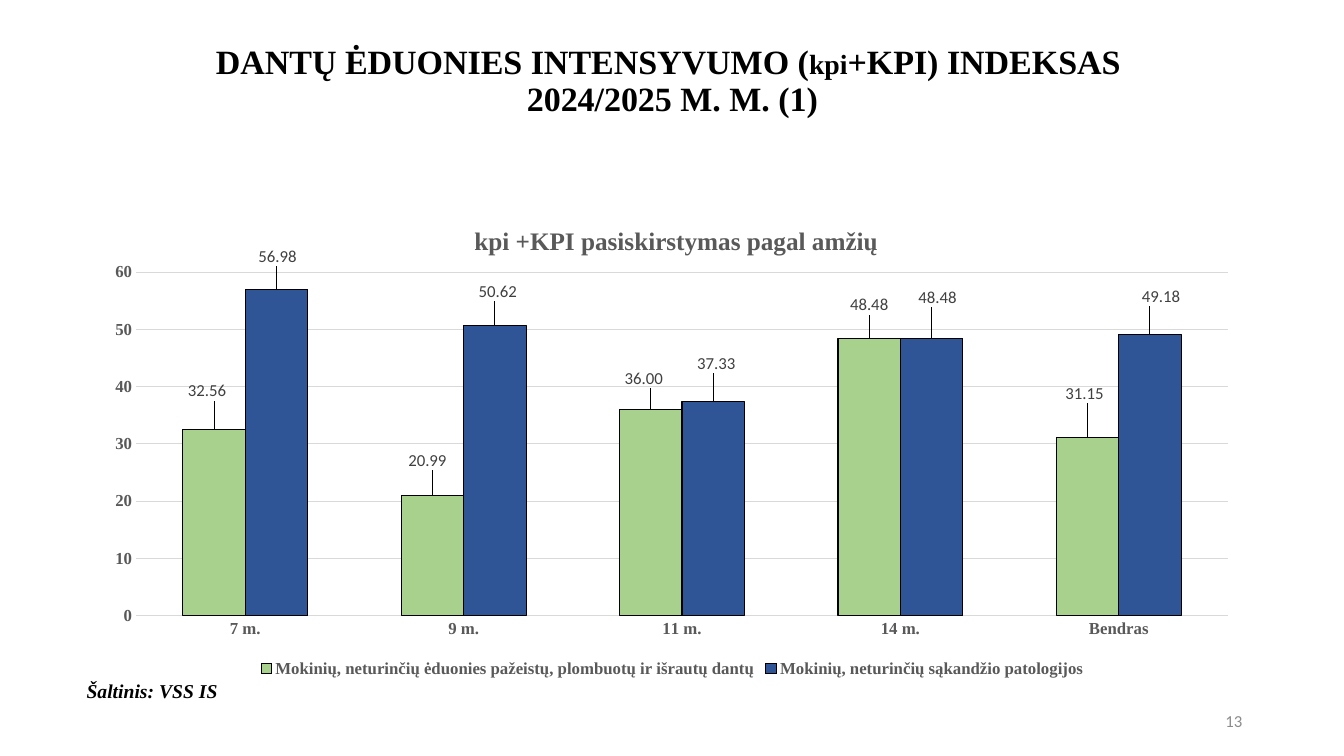
from pptx import Presentation
from pptx import util as u
from pptx.chart.data import CategoryChartData
from pptx.dml.color import RGBColor
from pptx.enum import chart as ch, text
from pptx.oxml import parse_xml
from pptx.oxml.ns import nsdecls, qn

INK = {"black": "000000", "axis": "595959", "label": "404040", "grid": "D9D9D9",
       "page": "8C8C8C", "green": "A9D18E", "blue": "2F5597"}
SERIF, SANS = "Times New Roman", "Calibri"
WIDE, HIGH = 11.5, 4.76  # chart size in inches

AGES = ["7 m.", "9 m.", "11 m.", "14 m.", "Bendras"]
# name, fill, values, label shifts in inches
SERIES = [
    ("Mokinių, neturinčių ėduonies pažeistų, plombuotų ir išrautų dantų", "green",
     [32.56, 20.99, 36, 48.48, 31.15],
     [(-0.07, -0.24), (-0.05, -0.21), (-0.07, -0.17), (0, -0.19), (-0.03, -0.3)]),
    ("Mokinių, neturinčių sąkandžio patologijos", "blue",
     [56.98, 50.62, 37.33, 48.48, 49.18],
     [(0.01, -0.19), (0.03, -0.2), (0.03, -0.24), (0.06, -0.26), (0.11, -0.23)]),
]


def style(font, size, color, face=SERIF, bold=False, italic=False):
    font.size, font.name = u.Pt(size), face
    font.bold, font.italic = bold, italic
    font.color.rgb = RGBColor.from_string(INK[color])


def stroke(line, color, width=0.75):
    line.color.rgb = RGBColor.from_string(INK[color])
    line.width = u.Pt(width)


def place(node, at, x, y, size=None, mode="edge"):
    """Put a manual layout, given in inches, into a chart part."""
    for old in node.findall(qn("c:layout")):
        node.remove(old)
    tags = []
    if size:
        tags.append('<c:layoutTarget val="inner"/>')
    if mode == "edge":
        tags.append('<c:xMode val="edge"/><c:yMode val="edge"/>')
    tags.append(f'<c:x val="{x / WIDE}"/><c:y val="{y / HIGH}"/>')
    if size:
        tags.append(f'<c:w val="{size[0] / WIDE}"/><c:h val="{size[1] / HIGH}"/>')
    node.insert(at, parse_xml(
        f'<c:layout {nsdecls("c")}><c:manualLayout>{"".join(tags)}'
        '</c:manualLayout></c:layout>'))


def add_box(slide, x, y, w, h, align, anchor, wrap=True):
    box = slide.shapes.add_textbox(*map(u.Inches, (x, y, w, h)))
    frame = box.text_frame
    frame.word_wrap, frame.vertical_anchor = wrap, anchor
    par = frame.paragraphs[0]
    par.alignment = align
    return par


def add_run(par, words, *look, **more):
    run = par.add_run()
    run.text = words
    style(run.font, *look, **more)


def add_head(slide, x, y, w, h):
    par = add_box(slide, x, y, w, h, text.PP_ALIGN.CENTER, text.MSO_ANCHOR.TOP)
    par.line_spacing = 0.9
    add_run(par, "DANTŲ ĖDUONIES INTENSYVUMO (", 24.3, "black", bold=True)
    add_run(par, "kpi", 19.8, "black", bold=True)
    add_run(par, "+KPI) INDEKSAS ", 24.3, "black", bold=True)
    par.add_line_break()
    add_run(par, "2024/2025 M. M. (1)", 24.3, "black", bold=True)


def add_labels(series, shifts):
    labels = series.data_labels
    labels.show_value = True
    labels.position = ch.XL_LABEL_POSITION.OUTSIDE_END
    style(labels.font, 12, "label", SANS)
    for i, (dx, dy) in enumerate(shifts):
        label = series.points[i].data_label
        style(label.font, 12, "label", SANS)
        label.position = ch.XL_LABEL_POSITION.OUTSIDE_END
        node = series._element.findall(".//" + qn("c:dLbl"))[i]
        place(node, 1, dx, dy, mode="factor")


def add_bars(slide, x, y, w, h):
    data = CategoryChartData(number_format="0.00")
    data.categories = AGES
    for name, _, vals, _ in SERIES:
        data.add_series(name, vals)
    chart = slide.shapes.add_chart(
        ch.XL_CHART_TYPE.COLUMN_CLUSTERED, *map(u.Inches, (x, y, w, h)), data).chart
    style(chart.font, 10, "black", SANS)

    chart.has_title = True
    title = chart.chart_title
    add_run(title.text_frame.paragraphs[0], "kpi +KPI pasiskirstymas pagal amžių",
            18, "axis", bold=True)
    place(title._element, 1, 3.74, 0.19)
    place(chart._chartSpace.chart.plotArea, 0, 0.43, 0.7, (10.83, 3.41))

    chart.has_legend = True
    chart.legend.position = ch.XL_LEGEND_POSITION.BOTTOM
    chart.legend.include_in_layout = False
    style(chart.legend.font, 12, "axis", bold=True)

    for axis in (chart.category_axis, chart.value_axis):
        axis.major_tick_mark = axis.minor_tick_mark = ch.XL_TICK_MARK.NONE
        axis.format.line.fill.background()
        style(axis.tick_labels.font, 12, "axis", bold=True)
    scale = chart.value_axis
    scale.minimum_scale, scale.maximum_scale, scale.major_unit = 0, 60, 10
    scale.tick_labels.number_format = "0"
    scale.tick_labels.number_format_is_linked = False
    stroke(scale.major_gridlines.format.line, "grid")

    plot = chart.plots[0]
    plot.gap_width, plot.overlap, plot.vary_by_categories = 150, 0, False
    for series, (_, color, _, shifts) in zip(plot.series, SERIES):
        series.format.fill.solid()
        series.format.fill.fore_color.rgb = RGBColor.from_string(INK[color])
        stroke(series.format.line, "black")
        add_labels(series, shifts)


def add_source(slide, x, y, w, h):
    par = add_box(slide, x, y, w, h, text.PP_ALIGN.LEFT, text.MSO_ANCHOR.TOP, False)
    add_run(par, "Šaltinis: VSS IS", 14, "black", bold=True, italic=True)


def add_page(slide, x, y, w, h):
    par = add_box(slide, x, y, w, h, text.PP_ALIGN.RIGHT, text.MSO_ANCHOR.MIDDLE)
    add_run(par, "13", 12, "page", SANS)


def main():
    deck = Presentation()
    deck.slide_width, deck.slide_height = u.Inches(13.33), u.Inches(7.5)
    slide = deck.slides.add_slide(deck.slide_layouts[6])
    add_head(slide, 0.92, 0.4, WIDE, 1.45)
    add_bars(slide, 0.92, 2, WIDE, HIGH)
    add_source(slide, 0.76, 6.69, 1.51, 0.34)
    add_page(slide, 9.42, 6.95, 3, 0.4)
    deck.save("out.pptx")


if __name__ == "__main__":
    main()
